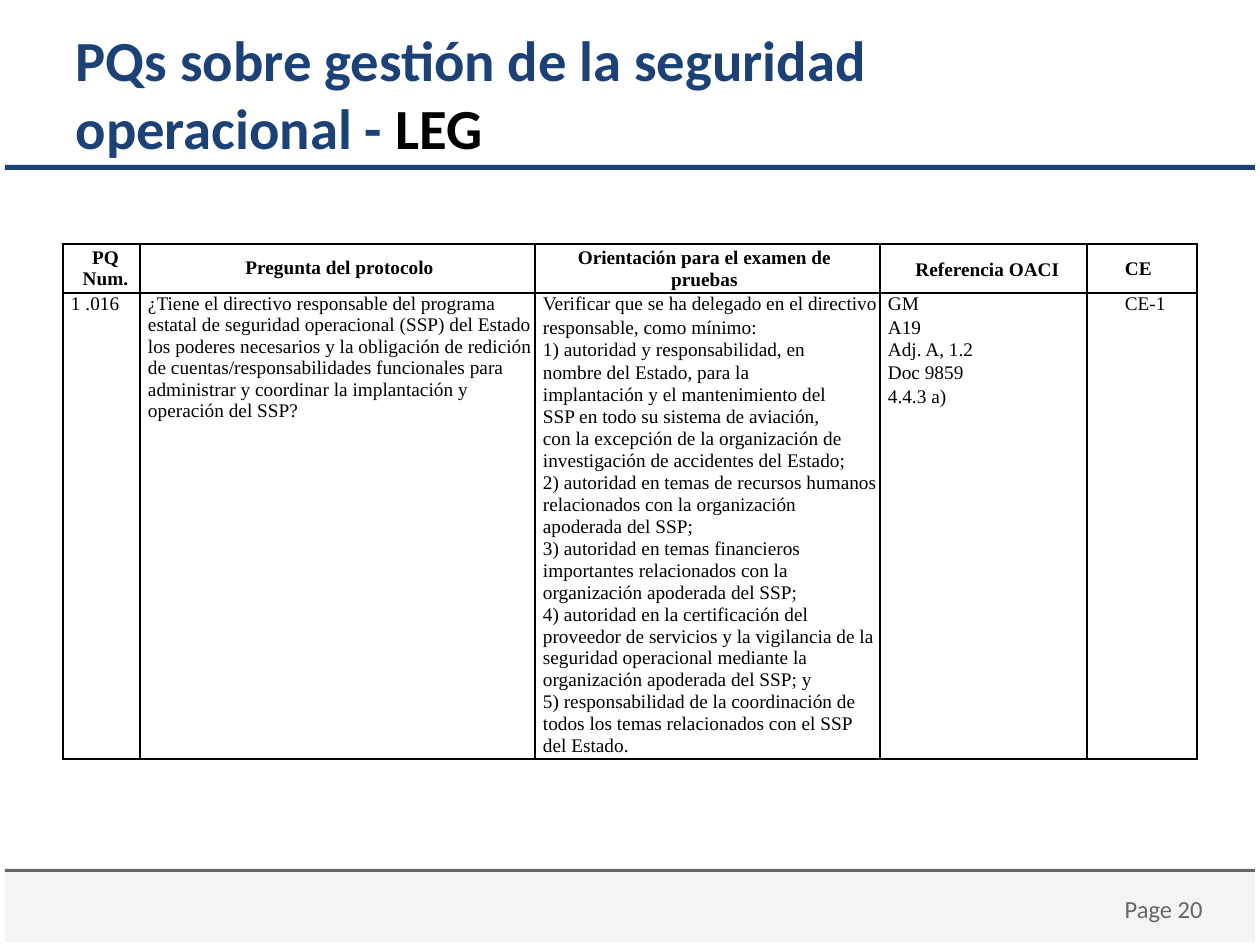
from lxml.etree import SubElement
from pptx import Presentation
from pptx.dml.color import RGBColor
from pptx.enum.shapes import MSO_SHAPE
from pptx.enum.text import MSO_ANCHOR, MSO_AUTO_SIZE, PP_ALIGN
from pptx.oxml.ns import qn
from pptx.util import Emu, Pt

NAVY, GREY, PALE, BLACK = "1B4177", "666666", "F3F4F4", "000000"


def px(length):
    return Emu(round(length * 914400 / 126))


def write(paragraph, text, size=11, font="Times New Roman", colour=BLACK, bold=False,
          align=PP_ALIGN.LEFT, leading=None, left=0, right=0):
    run = paragraph.add_run()
    run.text = text
    run.font.size = Pt(size)
    run.font.name = font
    run.font.bold = bold
    run.font.color.rgb = RGBColor.from_string(colour)
    paragraph.alignment = align
    if leading:
        paragraph.line_spacing = Pt(leading) if leading > 2 else leading
    properties = paragraph._p.get_or_add_pPr()
    properties.set("marL", str(px(left)))
    properties.set("marR", str(px(right)))
    properties.set("indent", "0")


presentation = Presentation()
presentation.slide_width = px(1260)
presentation.slide_height = px(945)
slide = presentation.slides.add_slide(presentation.slide_layouts[5])

for top, height, colour in [(869, 73, PALE), (869, 3, GREY), (165, 5, NAVY)]:
    bar = slide.shapes.add_shape(MSO_SHAPE.RECTANGLE, px(5), px(top), px(1250), px(height))
    bar.shadow.inherit = False
    bar.fill.solid()
    bar.fill.fore_color.rgb = RGBColor.from_string(colour)
    bar.line.fill.background()

page_box = slide.shapes.add_textbox(px(921), px(888), px(294), px(50))
page_box.text_frame.word_wrap = True
write(page_box.text_frame.paragraphs[0], "Page 20", size=14, font="Calibri",
      colour=GREY, align=PP_ALIGN.RIGHT)

title = slide.shapes.title
title.left, title.top, title.width, title.height = px(63), px(14), px(954), px(157)
title.text_frame.word_wrap = True
title.text_frame.auto_size = MSO_AUTO_SIZE.NONE
title.text_frame.vertical_anchor = MSO_ANCHOR.MIDDLE
for text, colour in [("PQs sobre gestión de la seguridad operacional - ", NAVY), ("LEG", BLACK)]:
    write(title.text_frame.paragraphs[0], text, size=32.4, font="Calibri", colour=colour, bold=True)

center = PP_ALIGN.CENTER
header = [
    [("PQ", 12.3, 8, 0, center), ("Num.", 12.3, 8, 0, center)],
    [("Pregunta del protocolo", 0.99, 8, 4, center)],
    [("Orientación para el examen de pruebas", 12.6, 8, 14, center)],
    [("Referencia OACI", 1.15, 8, 0, center)],
    [("CE", 12.3, 38, 0, PP_ALIGN.LEFT)],
]
body = [
    [("1 .016", 12.3, 8)],
    [("¿Tiene el directivo responsable del programa estatal de seguridad operacional (SSP) "
      "del Estado los poderes necesarios y la obligación de redición de "
      "cuentas/responsabilidades funcionales para administrar y coordinar la implantación "
      "y operación del SSP?", 12.3, 8)],
    [("Verificar que se ha delegado en el directivo", 12.3, 8),
     ("responsable, como mínimo:", 1.15, 8),
     ("1) autoridad y responsabilidad, en nombre del Estado, para la implantación y el "
      "mantenimiento del SSP en todo su sistema de aviación, con la excepción de la "
      "organización de investigación de accidentes del Estado;", 12.6, 8, 32),
     ("2) autoridad en temas de recursos humanos", 12.4, 8),
     ("relacionados con la organización apoderada del SSP;", 12.6, 8),
     ("3) autoridad en temas financieros", 12.6, 8),
     ("importantes relacionados con la organización apoderada del SSP;", 12.7, 8),
     ("4) autoridad en la certificación del proveedor de servicios y la vigilancia de la "
      "seguridad operacional mediante la organización apoderada del SSP; y", 12.4, 8),
     ("5) responsabilidad de la coordinación de todos los temas relacionados con el SSP "
      "del Estado.", 12.6, 8)],
    [("GM", 12.3, 8), ("A19", 1.15, 8), ("Adj. A, 1.2", 12.6, 8),
     ("Doc 9859", 12.6, 8), ("4.4.3 a)", 1.15, 8)],
    [("CE-1", 12.3, 38)],
]

table = slide.shapes.add_table(2, 5, px(63), px(244), px(1134), px(495)).table
table.first_row = False
table.horz_banding = False
for column, width in zip(table.columns, [77, 395, 345, 207, 110]):
    column.width = px(width)
for row, height in zip(table.rows, [49, 446]):
    row.height = px(height)

for row_index, contents in enumerate([header, body]):
    for column_index, lines in enumerate(contents):
        cell = table.cell(row_index, column_index)
        cell.margin_left = cell.margin_right = cell.margin_top = cell.margin_bottom = 0
        cell.vertical_anchor = MSO_ANCHOR.TOP if row_index else MSO_ANCHOR.MIDDLE
        cell.fill.background()
        frame = cell.text_frame
        for line_index, (text, leading, left, *rest) in enumerate(lines):
            paragraph = frame.add_paragraph() if line_index else frame.paragraphs[0]
            write(paragraph, text, bold=row_index == 0, leading=leading, left=left,
                  right=rest[0] if rest else 0,
                  align=rest[1] if len(rest) > 1 else PP_ALIGN.LEFT)
        cell_properties = cell._tc.get_or_add_tcPr()
        for position, side in enumerate(["a:lnL", "a:lnR", "a:lnT", "a:lnB"]):
            border = SubElement(cell_properties, qn(side), w=str(Pt(1)))
            SubElement(SubElement(border, qn("a:solidFill")), qn("a:srgbClr"), val=BLACK)
            cell_properties.insert(position, border)

presentation.save("out.pptx")
